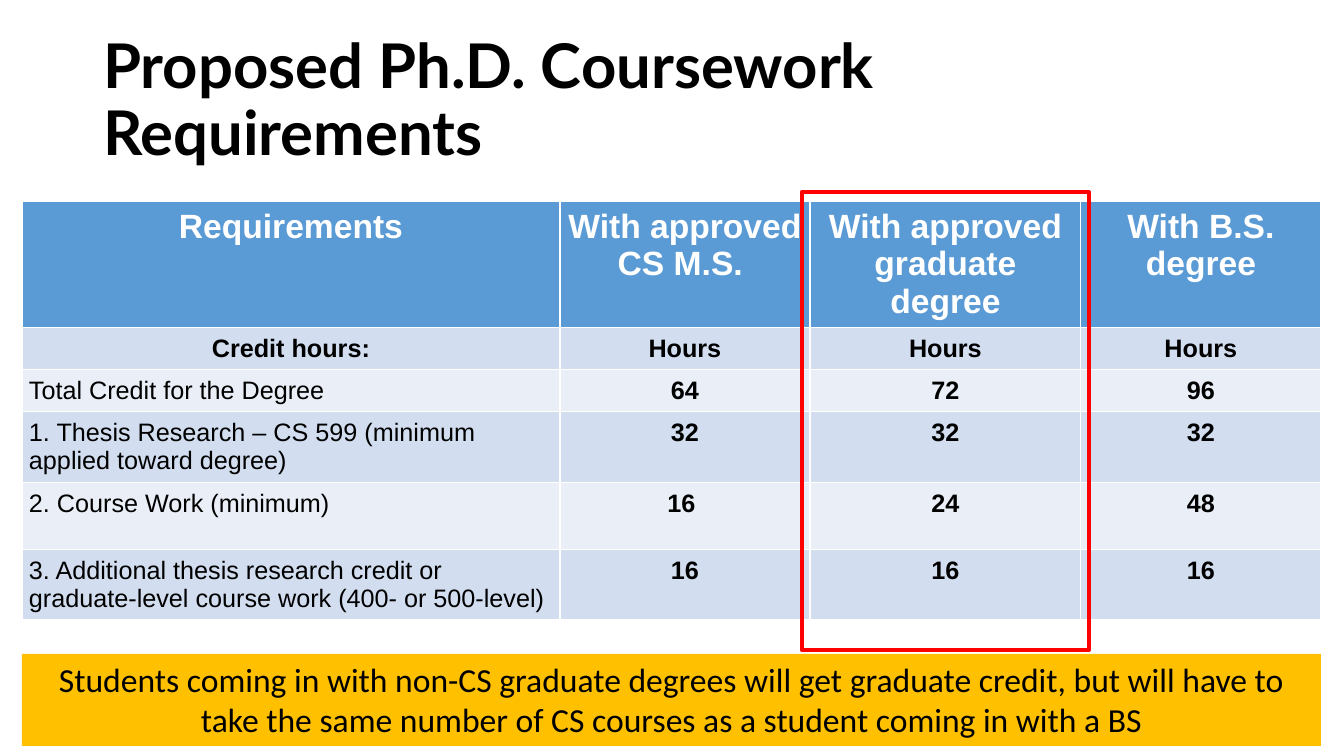
"""Build the slide on proposed Ph.D. coursework requirements."""
from dataclasses import dataclass

from pptx import Presentation
from pptx.dml.color import RGBColor
from pptx.enum.shapes import MSO_SHAPE
from pptx.enum.text import MSO_ANCHOR, MSO_AUTO_SIZE, PP_ALIGN
from pptx.util import Pt

RECTANGLE = MSO_SHAPE.RECTANGLE
TOP, MIDDLE = MSO_ANCHOR.TOP, MSO_ANCHOR.MIDDLE
LEFT, CENTER = PP_ALIGN.LEFT, PP_ALIGN.CENTER
NO_FIT, GROW = MSO_AUTO_SIZE.NONE, MSO_AUTO_SIZE.SHAPE_TO_FIT_TEXT
EMU_PER_PX = 914400 / 100.8
TITLE_ONLY = 5


@dataclass(frozen=True)
class Theme:
    """Colours, fonts and type sizes of the slide."""
    ink: str = "000000"
    white: str = "FFFFFF"
    header: str = "5B9BD5"
    bands: tuple[str, str] = ("D2DEEF", "EAEFF7")
    highlight: str = "FF0000"
    banner: str = "FFC000"
    title_font: str = "Lato"
    table_font: str = "Arial"
    banner_font: str = "Calibri"
    title_size: int = 44
    large_size: int = 24
    body_size: int = 18


@dataclass(frozen=True)
class Area:
    """A rectangle in px."""
    left: int
    top: int
    width: int
    height: int


@dataclass(frozen=True)
class Row:
    """One table row: its label, its values and its paragraph gaps in points."""
    height: int
    label: str
    values: tuple[str, str, str]
    label_gap: int = 0
    value_gap: int = 0
    heading: bool = False


THEME = Theme()
PAGE = Area(0, 0, 1344, 756)
TITLE = Area(93, 29, 1159, 146)
TABLE = Area(22, 201, 1299, 439)
HIGHLIGHT = Area(802, 192, 287, 458)
BANNER = Area(22, 654, 1299, 92)
COLUMNS = (538, 250, 271, 240)
CELL_MARGIN = 7
ROWS = (
    Row(121, "Requirements",
        ("With approved CS M.S. ", "With approved graduate degree", "With B.S. degree"),
        12, 12, True),
    Row(39, "Credit hours:", ("Hours", "Hours", "Hours"), 12, 12, True),
    Row(39, "Total Credit for the Degree", ("64", "72", "96"), 12),
    Row(67, "1. Thesis Research – CS 599 (minimum applied toward degree)",
        ("32", "32", "32")),
    Row(67, "2. Course Work (minimum)", ("16 ", "24", "48")),
    Row(67, "3. Additional thesis research credit or graduate-level course work "
        "(400- or 500-level)", ("16", "16", "16")),
)


def px(length: int) -> int:
    """Turn px into EMU."""
    return round(length * EMU_PER_PX)


def bounds(area: Area) -> tuple[int, int, int, int]:
    """Give the area in EMU."""
    return px(area.left), px(area.top), px(area.width), px(area.height)


def write(frame, text: str, font: str, size: int, color: str, align, bold: bool = False):
    """Fill a text frame with one formatted paragraph and return it."""
    frame.text = text
    para = frame.paragraphs[0]
    para.alignment = align
    para.font.name = font
    para.font.size = Pt(size)
    para.font.bold = bold
    para.font.color.rgb = RGBColor.from_string(color)
    return para


def add_title(page) -> None:
    """Move and format the title placeholder."""
    box = page.shapes.title
    box.left, box.top, box.width, box.height = bounds(TITLE)
    frame = box.text_frame
    frame.vertical_anchor = MIDDLE
    frame.auto_size = NO_FIT
    para = write(frame, "Proposed Ph.D. Coursework Requirements", THEME.title_font,
                 THEME.title_size, THEME.ink, LEFT, True)
    para.line_spacing = 0.9


def fill_cell(cell, text: str, row: Row, row_index: int, is_label: bool) -> None:
    """Write and colour one table cell."""
    is_header = row_index == 0
    cell.margin_left = cell.margin_right = px(CELL_MARGIN)
    cell.margin_top = cell.margin_bottom = px(CELL_MARGIN)
    cell.fill.solid()
    band = THEME.header if is_header else THEME.bands[(row_index - 1) % 2]
    cell.fill.fore_color.rgb = RGBColor.from_string(band)
    strong = row.heading or not is_label
    para = write(cell.text_frame, text, THEME.table_font,
                 THEME.large_size if is_header else THEME.body_size,
                 THEME.white if is_header else THEME.ink,
                 CENTER if strong else LEFT, strong)
    gap = row.label_gap if is_label else row.value_gap
    para.space_before = para.space_after = Pt(gap)


def add_requirements(page) -> None:
    """Add the table of credit hours."""
    table = page.shapes.add_table(len(ROWS), len(COLUMNS), *bounds(TABLE)).table
    for column, width in zip(table.columns, COLUMNS):
        column.width = px(width)
    for row_index, row in enumerate(ROWS):
        table.rows[row_index].height = px(row.height)
        for column_index, text in enumerate((row.label, *row.values)):
            fill_cell(table.cell(row_index, column_index), text, row, row_index,
                      column_index == 0)


def add_highlight(page) -> None:
    """Frame the column for other graduate degrees."""
    box = page.shapes.add_shape(RECTANGLE, *bounds(HIGHLIGHT))
    box.shadow.inherit = False
    box.fill.background()
    box.line.color.rgb = RGBColor.from_string(THEME.highlight)
    box.line.width = Pt(3)


def add_banner(page) -> None:
    """Add the closing remark."""
    box = page.shapes.add_shape(RECTANGLE, *bounds(BANNER))
    box.shadow.inherit = False
    box.fill.solid()
    box.fill.fore_color.rgb = RGBColor.from_string(THEME.banner)
    box.line.fill.background()
    frame = box.text_frame
    frame.word_wrap = True
    frame.auto_size = GROW
    frame.vertical_anchor = TOP
    write(frame, "Students coming in with non-CS graduate degrees will get graduate credit, "
          "but will have to take the same number of CS courses as a student coming in "
          "with a BS", THEME.banner_font, THEME.large_size, THEME.ink, CENTER)


def main() -> None:
    """Build and save the deck."""
    deck = Presentation()
    deck.slide_width, deck.slide_height = px(PAGE.width), px(PAGE.height)
    page = deck.slides.add_slide(deck.slide_layouts[TITLE_ONLY])
    add_title(page)
    add_requirements(page)
    add_highlight(page)
    add_banner(page)
    deck.save("out.pptx")


if __name__ == "__main__":
    main()
